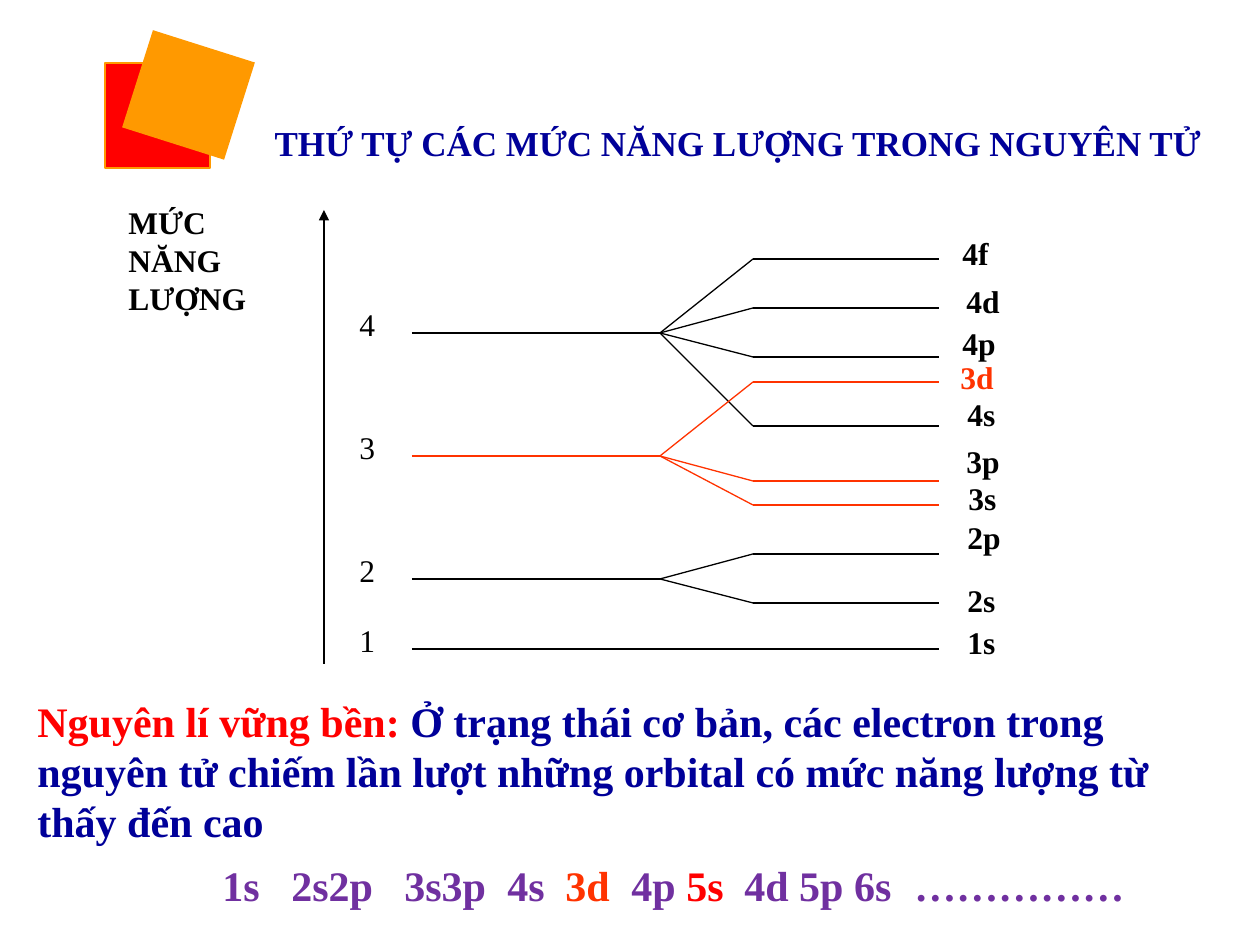
from lxml import etree
from pptx import Presentation, util as u
from pptx.dml.color import RGBColor
from pptx.enum import shapes, text
from pptx.oxml import ns

PX = 914400 / 126
FONT = "Times New Roman"
BLACK = RGBColor(0x00, 0x00, 0x00)
RED = RGBColor(0xFF, 0x00, 0x00)
ORANGE = RGBColor(0xFF, 0x99, 0x00)
VERMILION = RGBColor(0xFF, 0x33, 0x00)
NAVY = RGBColor(0x00, 0x00, 0x99)
PURPLE = RGBColor(0x70, 0x30, 0xA0)

LEVEL_LEFT, FORK, BRANCH, LEVEL_RIGHT = 412, 660, 753, 939
NUMBER_LEFT, NUMBER_RISE = 347, 34
LABEL_SIZE = (125, 74)

# level number, height, colour, sublevels: name, line height, label left and top, label colour
LEVELS = [
    ("4", 333, BLACK, [("4f", 259, 950, 228, BLACK), ("4d", 308, 954, 276, BLACK),
                       ("4p", 357, 950, 318, BLACK), ("4s", 426, 955, 389, BLACK)]),
    ("3", 456, VERMILION, [("3d", 382, 948, 352, VERMILION), ("3p", 481, 954, 436, BLACK),
                           ("3s", 505, 956, 473, BLACK)]),
    ("2", 579, BLACK, [("2p", 554, 955, 512, BLACK), ("2s", 603, 955, 575, BLACK)]),
    ("1", 649, BLACK, [("1s", 649, 955, 617, BLACK)]),
]
SEQUENCE = [
    ("1s\t2s2p\t3s3p\t4s\t", PURPLE), ("3d\t", VERMILION), ("4p ", PURPLE),
    ("5s\t", RED), ("4d 5p 6s\t……………", PURPLE),
]
SEQUENCE_TABS = [69, 182, 285, 343, 409, 522, 692]


def px(value):
    return u.Emu(round(value * PX))


def write(shape, runs, size, bold=True):
    frame = shape.text_frame
    frame.word_wrap = True
    frame.auto_size = text.MSO_AUTO_SIZE.NONE
    frame.vertical_anchor = text.MSO_ANCHOR.TOP
    paragraph = frame.paragraphs[0]
    paragraph.alignment = text.PP_ALIGN.LEFT
    for words, color in runs:
        run = paragraph.add_run()
        run.text = words
        run.font.name = FONT
        run.font.size = u.Pt(size)
        run.font.bold = bold
        run.font.color.rgb = color
    return paragraph


def add_text(slide, box, runs, size=18, bold=True):
    shape = slide.shapes.add_textbox(*map(px, box))
    return write(shape, runs, size, bold)


def add_title(slide, box, words):
    title = slide.shapes.title
    title.left, title.top, title.width, title.height = map(px, box)
    write(title, [(words, NAVY)], 20)


def add_line(slide, start, end, color=BLACK, arrow=False):
    line = slide.shapes.add_connector(
        shapes.MSO_CONNECTOR.STRAIGHT, *map(px, start + end))
    line.line.color.rgb = color
    line.line.width = u.Pt(0.75)
    etree.SubElement(line._element.spPr, ns.qn("a:effectLst"))
    if arrow:
        tail = etree.SubElement(line.line._get_or_add_ln(), ns.qn("a:tailEnd"))
        tail.set("type", "triangle")


def add_square(slide, box, fill, outline=None, rotation=0):
    square = slide.shapes.add_shape(shapes.MSO_SHAPE.RECTANGLE, *map(px, box))
    square.shadow.inherit = False
    square.rotation = rotation
    square.fill.solid()
    square.fill.fore_color.rgb = fill
    if outline is None:
        square.line.fill.background()
    else:
        square.line.color.rgb = outline
        square.line.width = u.Pt(0.75)


def add_level(slide, number, height, color, sublevels):
    add_text(slide, (NUMBER_LEFT, height - NUMBER_RISE, *LABEL_SIZE),
             [(number, BLACK)], bold=False)
    single = len(sublevels) == 1
    add_line(slide, (LEVEL_LEFT, height),
             (LEVEL_RIGHT if single else FORK, height), color)
    for name, line_height, left, top, label_color in sublevels:
        if not single:
            add_line(slide, (FORK, height), (BRANCH, line_height), color)
            add_line(slide, (BRANCH, line_height), (LEVEL_RIGHT, line_height), color)
        add_text(slide, (left, top, *LABEL_SIZE), [(name, label_color)])


def add_sequence(slide, box):
    paragraph = add_text(slide, box, SEQUENCE, 24)
    tabs = etree.SubElement(paragraph._p.get_or_add_pPr(), ns.qn("a:tabLst"))
    for position in SEQUENCE_TABS:
        etree.SubElement(tabs, ns.qn("a:tab"), pos=str(px(position)), algn="l")
    paragraph.line_spacing = 0.8


def main():
    presentation = Presentation()
    presentation.slide_width = u.Inches(10)
    presentation.slide_height = u.Inches(7.5)
    slide = presentation.slides.add_slide(presentation.slide_layouts[5])

    add_square(slide, (105, 63, 105, 105), RED, ORANGE)
    add_square(slide, (135, 44, 107, 102), ORANGE, rotation=17.6)
    add_title(slide, (262, 115, 987, 54), "THỨ TỰ CÁC MỨC NĂNG LƯỢNG TRONG NGUYÊN TỬ")
    add_text(slide, (116, 197, 197, 73), [("MỨC NĂNG LƯỢNG", BLACK)])
    add_line(slide, (324, 664), (324, 210), arrow=True)
    for level in LEVELS:
        add_level(slide, *level)
    add_text(slide, (25, 689, 1193, 165), [
        ("Nguyên lí vững bền: ", RED),
        ("Ở trạng thái cơ bản, các electron trong nguyên tử chiếm lần lượt "
         "những orbital có mức năng lượng từ thấy đến cao", NAVY),
    ], 24)
    add_sequence(slide, (210, 863, 976, 60))
    presentation.save("out.pptx")


if __name__ == "__main__":
    main()
